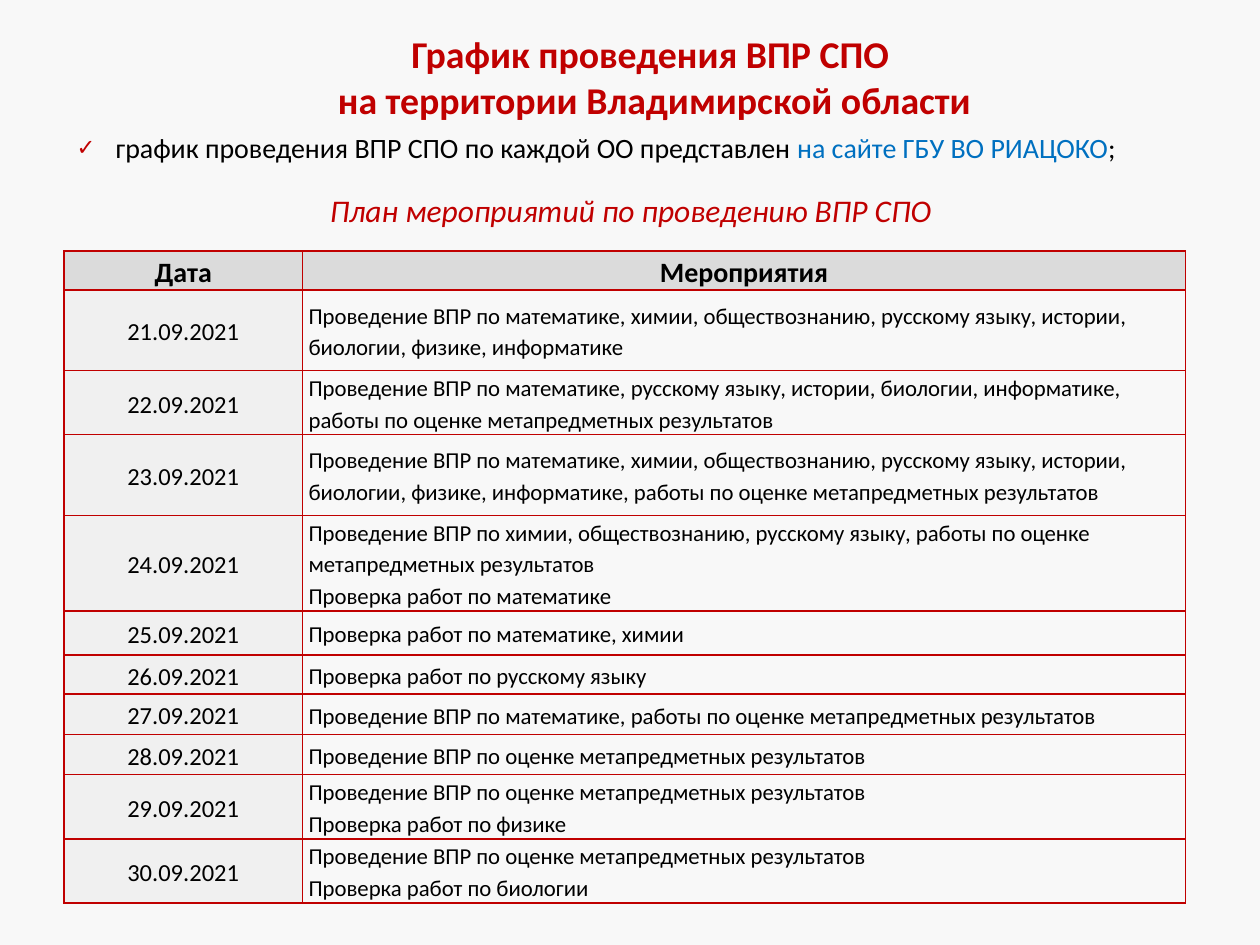
from lxml import etree
from pptx import Presentation
from pptx.dml.color import RGBColor
from pptx.enum import text
from pptx.oxml import ns
from pptx.util import Inches, Pt

COLORS = {"back": "F8F8F8", "red": "C00000", "blue": "0070C0", "black": "000000",
          "head": "DBDBDB", "date": "F0F0F0"}
FONT = "Calibri"
CENTER = text.PP_ALIGN.CENTER
MIDDLE = text.MSO_ANCHOR.MIDDLE
COLS = [1.89, 7.01]
HEADINGS = ["Дата", "Мероприятия"]
META = "работы по оценке метапредметных результатов"
META_ONLY = "Проведение ВПР по оценке метапредметных результатов"
HEAD_HEIGHT = 0.31
EVENTS = [
    (0.64, "21.09.2021", ["Проведение ВПР по математике, химии, обществознанию, русскому языку, "
                          "истории, биологии, физике, информатике"]),
    (0.51, "22.09.2021", ["Проведение ВПР по математике, русскому языку, истории, биологии, "
                          f"информатике, {META}"]),
    (0.64, "23.09.2021", ["Проведение ВПР по математике, химии, обществознанию, русскому языку, "
                          f"истории, биологии, физике, информатике, {META}"]),
    (0.76, "24.09.2021", [f"Проведение ВПР по химии, обществознанию, русскому языку, {META}",
                          "Проверка работ по математике"]),
    (0.35, "25.09.2021", ["Проверка работ по математике, химии"]),
    (0.31, "26.09.2021", ["Проверка работ по русскому языку"]),
    (0.32, "27.09.2021", [f"Проведение ВПР по математике, {META}"]),
    (0.32, "28.09.2021", [META_ONLY]),
    (0.51, "29.09.2021", [META_ONLY, "Проверка работ по физике"]),
    (0.51, "30.09.2021", [META_ONLY, "Проверка работ по биологии"]),
]


def rgb(name):
    """Return the named colour."""
    return RGBColor.from_string(COLORS[name])


def add_text(p, words, size, color="black", bold=False, italic=False, align=None, spacing=None):
    """Append formatted words to a paragraph, breaking at newlines."""
    if align is not None:
        p.alignment = align
    if spacing is not None:
        p.line_spacing = spacing
    for i, line in enumerate(words.split("\n")):
        if i:
            p.add_line_break()
        r = p.add_run()
        r.text = line
        f = r.font
        f.name, f.size, f.bold, f.italic = FONT, Pt(size), bold, italic
        f.color.rgb = rgb(color)


def add_box(s, box, wrap=True, anchor=text.MSO_ANCHOR.TOP):
    """Add a text box and return its first paragraph."""
    tf = s.shapes.add_textbox(*map(Inches, box)).text_frame
    tf.word_wrap = wrap
    tf.vertical_anchor = anchor
    return tf.paragraphs[0]


def add_title(s, box):
    """Place the slide title."""
    p = add_box(s, box, anchor=MIDDLE)
    add_text(p, "График проведения ВПР СПО \nна территории Владимирской области",
             21.6, "red", bold=True, align=CENTER)


def add_note(s, box):
    """Place the check-marked note on where the schedule is found."""
    p = add_box(s, box)
    for words, color in [("график проведения ВПР СПО по каждой ОО представлен ", "black"),
                         ("на сайте ГБУ ВО РИАЦОКО", "blue"), (";", "black")]:
        add_text(p, words, 16, color)
    pPr = p._p.get_or_add_pPr()
    pPr.set("marL", str(Inches(0.31)))
    pPr.set("indent", str(Inches(-0.31)))
    clr = etree.SubElement(pPr, ns.qn("a:buClr"))
    etree.SubElement(clr, ns.qn("a:srgbClr"), val=COLORS["red"])
    etree.SubElement(pPr, ns.qn("a:buSzPct"), val="80000")
    etree.SubElement(pPr, ns.qn("a:buFont"), typeface=FONT)
    etree.SubElement(pPr, ns.qn("a:buChar"), char="✓")


def add_subtitle(s, box):
    """Place the heading of the plan."""
    p = add_box(s, box, wrap=False)
    add_text(p, "План мероприятий по проведению ВПР СПО", 18, "red", italic=True)


def add_borders(cell):
    """Draw a thin red line on each side of a cell."""
    tcPr = cell._tc.get_or_add_tcPr()
    for i, side in enumerate(("lnL", "lnR", "lnT", "lnB")):
        ln = etree.Element(ns.qn(f"a:{side}"), w=str(Pt(1)))
        fill = etree.SubElement(ln, ns.qn("a:solidFill"))
        etree.SubElement(fill, ns.qn("a:srgbClr"), val=COLORS["red"])
        tcPr.insert(i, ln)


def fill_cell(cell, lines, size, fill=None, **fmt):
    """Write the lines of one cell and set its fill, margins and borders."""
    cell.vertical_anchor = MIDDLE
    cell.margin_left = cell.margin_right = Inches(0.05)
    cell.margin_top = cell.margin_bottom = 0
    if fill:
        cell.fill.solid()
        cell.fill.fore_color.rgb = rgb(fill)
    else:
        cell.fill.background()
    tf = cell.text_frame
    for i, line in enumerate(lines):
        p = tf.add_paragraph() if i else tf.paragraphs[0]
        add_text(p, line, size, spacing=1.15, **fmt)
    add_borders(cell)


def add_plan(s, box):
    """Place the table of dates and events."""
    table = s.shapes.add_table(len(EVENTS) + 1, len(COLS), *map(Inches, box)).table
    table.first_row = table.horz_banding = False
    for col, width in zip(table.columns, COLS):
        col.width = Inches(width)
    table.rows[0].height = Inches(HEAD_HEIGHT)
    for i, heading in enumerate(HEADINGS):
        fill_cell(table.cell(0, i), [heading], 16, "head", bold=True, align=CENTER)
    for i, (height, date, lines) in enumerate(EVENTS, 1):
        table.rows[i].height = Inches(height)
        fill_cell(table.cell(i, 0), [date], 14, "date", align=CENTER)
        fill_cell(table.cell(i, 1), lines, 13)


def main():
    """Build the slide and save it."""
    prs = Presentation()
    prs.slide_width, prs.slide_height = Inches(10), Inches(7.5)
    s = prs.slides.add_slide(prs.slide_layouts[6])
    s.background.fill.solid()
    s.background.fill.fore_color.rgb = rgb("back")
    add_title(s, (1.14, 0.21, 8.11, 0.79))
    add_plan(s, (0.51, 1.99, 8.9, 5.14))
    add_note(s, (0.51, 0.99, 9.06, 0.37))
    add_subtitle(s, (2.52, 1.47, 5.03, 0.4))
    prs.save("out.pptx")


if __name__ == "__main__":
    main()
